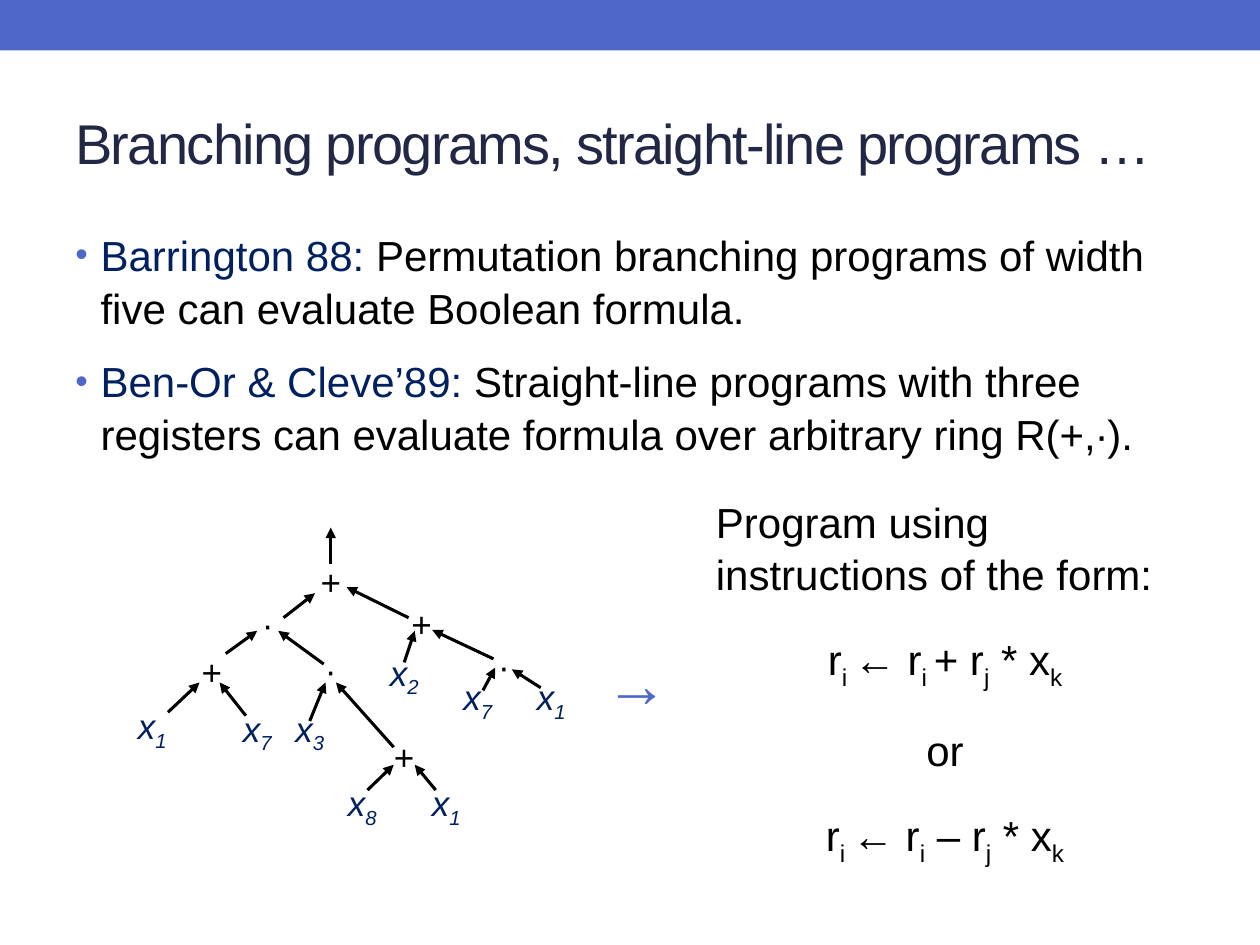
import pptx
import pptx.util
import pptx.dml.color
import pptx.enum.shapes
import pptx.enum.text
import pptx.oxml.ns
from dataclasses import dataclass
from lxml import etree

Pt = pptx.util.Pt
ALIGN = pptx.enum.text.PP_ALIGN
ANCHOR = pptx.enum.text.MSO_ANCHOR
qn = pptx.oxml.ns.qn


@dataclass(frozen=True)
class Theme:
    font: str = "Arial"
    accent: str = "4E67C8"
    title: str = "212745"
    name: str = "002060"
    ink: str = "000000"
    title_size: int = 32
    body_size: int = 24
    node_size: int = 20
    arrow_size: int = 36
    line_width: float = 1.75


THEME = Theme()
NODE_W, NODE_H = 42, 32

# Tree nodes: left, top, label; a label of two characters has a subscript
NODES = [
    (168, 317, "+"), (220, 340.5, "+"), (267, 364.5, "∙"),
    (132, 340.5, "∙"), (168, 367, "∙"), (100, 368, "+"),
    (66, 399, "x1"), (126, 400.5, "x7"), (156, 400.5, "x3"),
    (186, 443, "x8"), (234, 443, "x1"), (252, 382.5, "x7"),
    (294, 382.5, "x1"), (210, 368.5, "x2"), (210, 417, "+"),
]

# Tree edges: start x, y and end x, y, pointing towards the root
EDGES = [
    (96, 407, 114, 390), (140.5, 409, 125.5, 390),
    (129, 373.5, 147, 360.5), (162, 353, 180, 339),
    (177, 412, 186, 390), (225, 427, 192, 390),
    (210, 451.5, 225, 437), (249, 451.5, 237, 437),
    (185, 379.5, 159, 360.5), (231, 378.5, 237, 360.5),
    (276, 394.5, 283, 381.5), (309, 393, 292.5, 382.5),
    (282, 376.5, 247, 360), (233.5, 353, 198, 335.5),
    (189, 322.5, 189, 301.5),
]


def rgb(color):
    return pptx.dml.color.RGBColor.from_string(color)


def add_run(p, text, *, size, color=THEME.ink, italic=False, sub=False, spacing=None):
    r = p.add_run()
    r.text = text
    r.font.name = THEME.font
    r.font.size = Pt(size)
    r.font.color.rgb = rgb(color)
    if italic:
        r.font.italic = True
    rpr = r.font._element
    if sub:
        rpr.set("baseline", "-25000")
    if spacing is not None:
        rpr.set("spc", str(spacing * 100))


def add_box(s, left, top, width, height, *, wrap=True, anchor=ANCHOR.TOP):
    sp = s.shapes.add_textbox(Pt(left), Pt(top), Pt(width), Pt(height))
    tf = sp.text_frame
    tf.word_wrap = wrap
    tf.vertical_anchor = anchor
    return tf


def add_paragraph(tf, *, align=ALIGN.LEFT, before=0, line_spacing=None):
    first = tf.paragraphs[0]
    p = tf.add_paragraph() if first.runs else first
    p.alignment = align
    p.space_before = Pt(before)
    if line_spacing:
        p.line_spacing = line_spacing
    return p


def add_bullet(p, indent):
    ppr = p._p.get_or_add_pPr()
    ppr.set("marL", str(Pt(indent)))
    ppr.set("indent", str(-Pt(indent)))
    color = etree.SubElement(ppr, qn("a:buClr"))
    etree.SubElement(color, qn("a:srgbClr"), val=THEME.accent)
    etree.SubElement(ppr, qn("a:buSzPct"), val="85000")
    etree.SubElement(ppr, qn("a:buFont"), typeface=THEME.font)
    etree.SubElement(ppr, qn("a:buChar"), char="•")


def add_bar(s, width, height):
    sp = s.shapes.add_shape(
        pptx.enum.shapes.MSO_SHAPE.RECTANGLE, 0, 0, width, Pt(height))
    sp.shadow.inherit = False
    sp.fill.solid()
    sp.fill.fore_color.rgb = rgb(THEME.accent)
    sp.line.fill.background()


def add_node(s, left, top, label):
    p = add_paragraph(add_box(s, left, top, NODE_W, NODE_H), align=ALIGN.CENTER)
    if len(label) == 1:
        add_run(p, label, size=THEME.node_size)
    else:
        for text, sub in zip(label, (False, True)):
            add_run(p, text, size=THEME.node_size, color=THEME.name,
                    italic=True, sub=sub)


def add_edge(s, x1, y1, x2, y2):
    line = s.shapes.add_connector(
        pptx.enum.shapes.MSO_CONNECTOR.STRAIGHT, Pt(x1), Pt(y1), Pt(x2), Pt(y2))
    line.line.color.rgb = rgb(THEME.ink)
    line.line.width = Pt(THEME.line_width)
    etree.SubElement(line.line._get_or_add_ln(), qn("a:tailEnd"), type="triangle")
    etree.SubElement(line._element.spPr, qn("a:effectLst"))


def add_statements(s):
    tf = add_box(s, 36, 126, 648, 156)
    statements = [
        ("Barrington 88: ", "Permutation branching programs of width five "
         "can evaluate Boolean formula.", 6),
        ("Ben-Or & Cleve’89: ", "Straight-line programs with three registers "
         "can evaluate formula over arbitrary ring R(+,∙).", 12),
    ]
    for source, claim, before in statements:
        p = add_paragraph(tf, before=before, line_spacing=1.05)
        add_bullet(p, 14.4)
        add_run(p, source, size=THEME.body_size, color=THEME.name)
        add_run(p, claim, size=THEME.body_size)


def add_instructions(s):
    tf = add_box(s, 402, 278.5, 276, 207.5)
    p = add_paragraph(tf, line_spacing=1.05)
    add_run(p, "Program using instructions of the form:", size=THEME.body_size)
    # Each row alternates normal and subscript text
    rows = [
        ("r", "i ", "← r", "i ", "+ r", "j", " * x", "k"),
        ("or",),
        ("r", "i ", "← r", "i", " – r", "j", " * x", "k"),
    ]
    for row in rows:
        p = add_paragraph(tf, align=ALIGN.CENTER, before=18, line_spacing=1.05)
        for i, text in enumerate(row):
            add_run(p, text, size=THEME.body_size, sub=i % 2 == 1)


def main():
    prs = pptx.Presentation()
    prs.slide_width, prs.slide_height = Pt(720), Pt(540)
    s = prs.slides.add_slide(prs.slide_layouts[6])

    # Header bar and title
    add_bar(s, prs.slide_width, 28.8)
    title = add_box(s, 36, 42, 648, 78, anchor=ANCHOR.MIDDLE)
    add_run(add_paragraph(title), "Branching programs, straight-line programs …",
            size=THEME.title_size, color=THEME.title, spacing=-1)

    add_statements(s)

    # Formula tree
    for node in NODES:
        add_node(s, *node)
    for edge in EDGES:
        add_edge(s, *edge)

    # Resulting program
    add_instructions(s)
    arrow = add_box(s, 339, 364.5, 51, 51, wrap=False)
    add_run(add_paragraph(arrow), "→", size=THEME.arrow_size, color=THEME.accent)

    prs.save("out.pptx")


if __name__ == "__main__":
    main()
